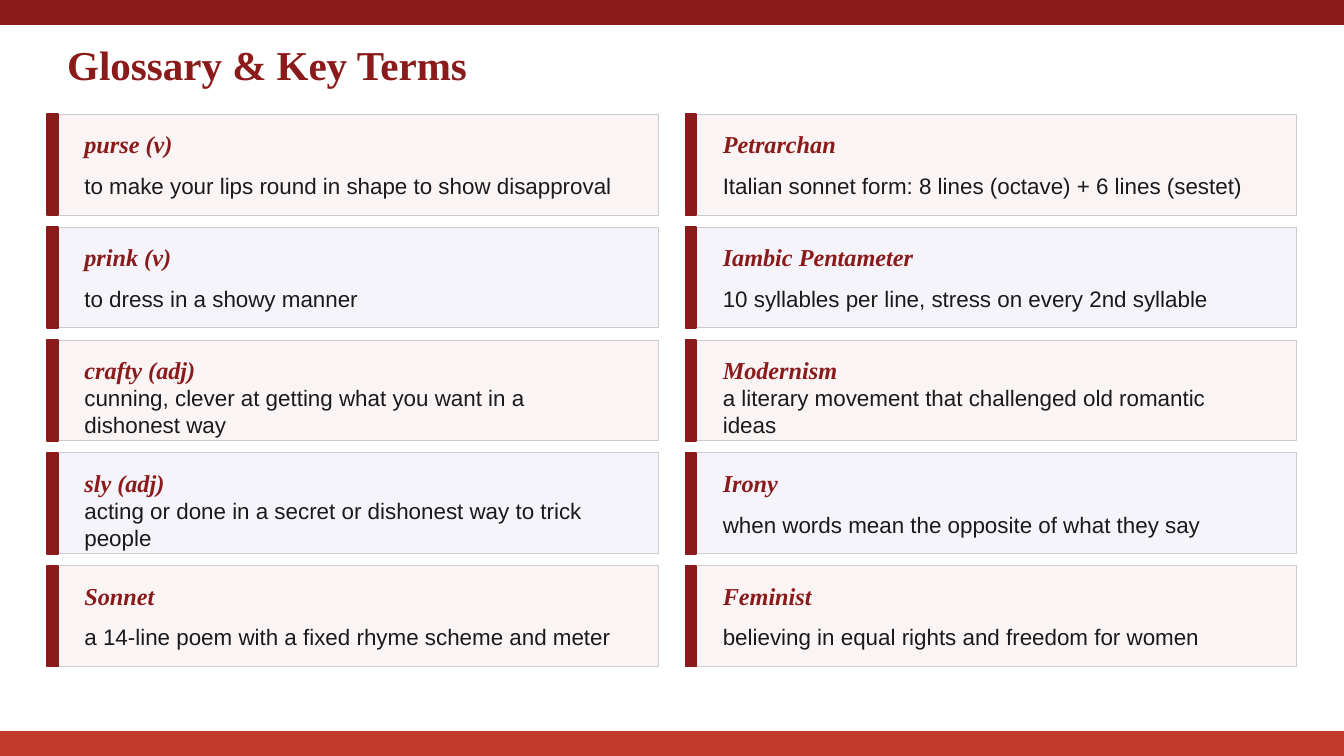
import pptx
import pptx.util
import pptx.dml.color
import pptx.enum.shapes
import pptx.enum.text

Inches = pptx.util.Inches
hue = pptx.dml.color.RGBColor.from_string
RED = "8B1A1A"
SERIF = "Times New Roman"


def block(x, y, w, h, fill, line, width):
    shape = slide.shapes.add_shape(
        pptx.enum.shapes.MSO_SHAPE.RECTANGLE,
        Inches(x), Inches(y), Inches(w), Inches(h))
    shape.shadow.inherit = False
    shape.fill.solid()
    shape.fill.fore_color.rgb = hue(fill)
    shape.line.color.rgb = hue(line)
    shape.line.width = pptx.util.Pt(width)


def label(shape, text, size, face, color, bold=False, slant=False):
    frame = shape.text_frame
    frame.text = text
    frame.word_wrap = True
    frame.auto_size = pptx.enum.text.MSO_AUTO_SIZE.NONE
    frame.vertical_anchor = pptx.enum.text.MSO_ANCHOR.MIDDLE
    para = frame.paragraphs[0]
    para.alignment = pptx.enum.text.PP_ALIGN.LEFT
    para.font.size = pptx.util.Pt(size)
    para.font.name = face
    para.font.color.rgb = hue(color)
    para.font.bold = bold
    para.font.italic = slant


deck = pptx.Presentation()
deck.slide_width = Inches(10)
deck.slide_height = Inches(10 * 9 / 16)
slide = deck.slides.add_slide(deck.slide_layouts[5])

block(0, 0, 10, 0.18, RED, RED, 1)
block(0, 10 * 9 / 16 - 0.18, 10, 0.18, "C0392B", "C0392B", 1)

title = slide.shapes.title
title.left, title.top = Inches(0.4), Inches(0.25)
title.width, title.height = Inches(9.2), Inches(0.45)
label(title, "Glossary & Key Terms", 22, SERIF, RED, bold=True)

terms = [
    ("purse (v)", "to make your lips round in shape to show disapproval"),
    ("prink (v)", "to dress in a showy manner"),
    ("crafty (adj)", "cunning, clever at getting what you want in a dishonest way"),
    ("sly (adj)", "acting or done in a secret or dishonest way to trick people"),
    ("Sonnet", "a 14-line poem with a fixed rhyme scheme and meter"),
    ("Petrarchan", "Italian sonnet form: 8 lines (octave) + 6 lines (sestet)"),
    ("Iambic Pentameter", "10 syllables per line, stress on every 2nd syllable"),
    ("Modernism", "a literary movement that challenged old romantic ideas"),
    ("Irony", "when words mean the opposite of what they say"),
    ("Feminist", "believing in equal rights and freedom for women"),
]

for i, (term, sense) in enumerate(terms):
    col, row = divmod(i, 5)
    x = 0.35 + 4.75 * col
    y = 0.85 + 0.84 * row
    block(x, y, 4.55, 0.75, ["FAF4F4", "F4F4FA"][row % 2], "CCCCCC", 0.5)
    block(x, y, 0.08, 0.75, RED, RED, 1)
    head = slide.shapes.add_textbox(
        Inches(x + 0.18), Inches(y + 0.08), Inches(1.8), Inches(0.28))
    label(head, term, 13, SERIF, RED, bold=True, slant=True)
    body = slide.shapes.add_textbox(
        Inches(x + 0.18), Inches(y + 0.38), Inches(4.2), Inches(0.3))
    label(body, sense, 12, "Arial", "1A1A1A")

deck.save("out.pptx")
